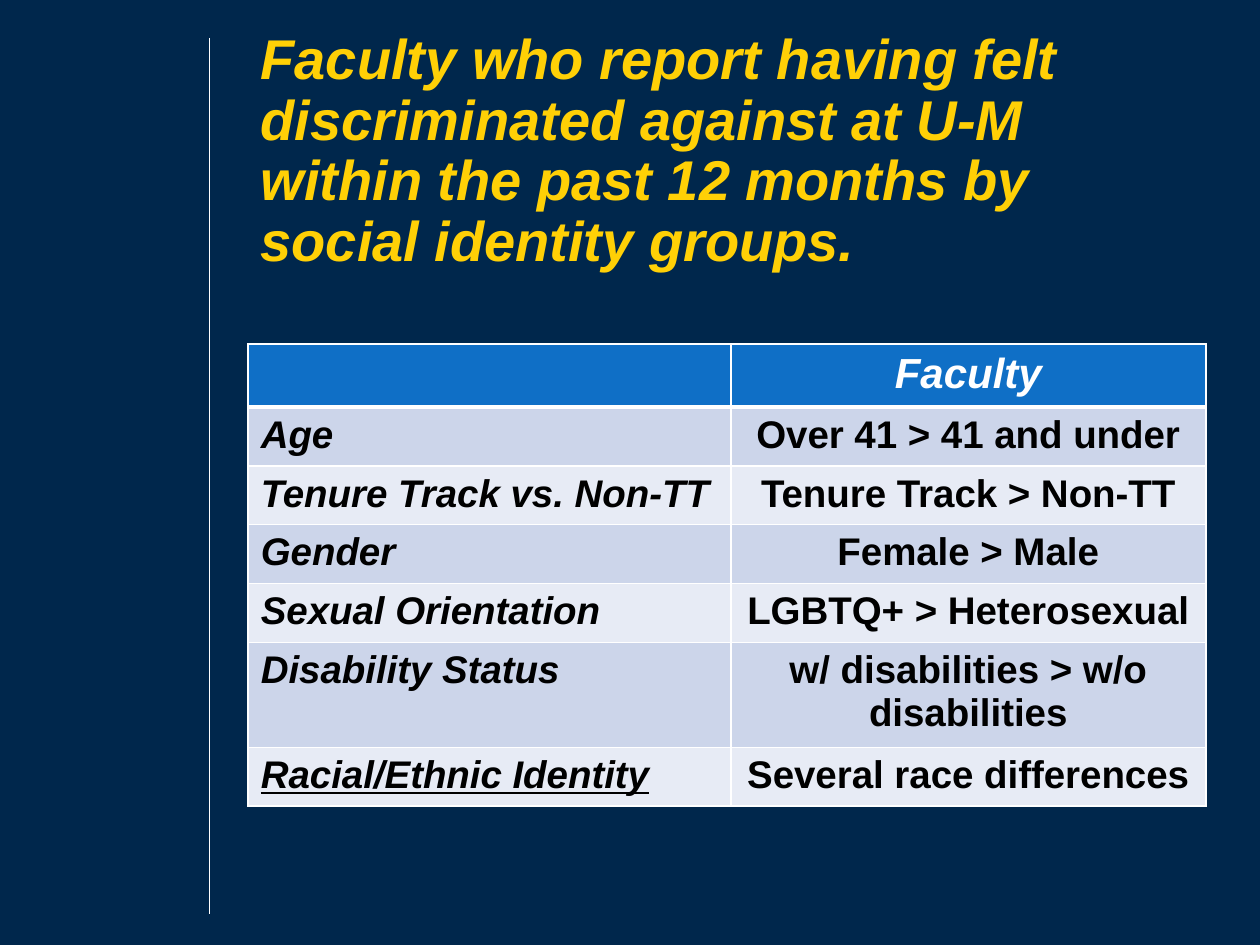
"""Build a slide on faculty discrimination reports by social identity group."""
from dataclasses import dataclass

from lxml import etree
from pptx import Presentation
from pptx.dml.color import RGBColor
from pptx.enum.shapes import MSO_CONNECTOR
from pptx.enum.text import MSO_ANCHOR, PP_ALIGN
from pptx.oxml.ns import qn
from pptx.util import Inches, Pt

STRAIGHT = MSO_CONNECTOR.STRAIGHT
TOP = MSO_ANCHOR.TOP
LEFT, CENTER = PP_ALIGN.LEFT, PP_ALIGN.CENTER
FONT = "Arial"
COLORS = {
    "navy": "00274C",
    "maize": "FFD006",
    "header": "0F6FC6",
    "odd": "CCD5EA",
    "even": "E7EBF5",
    "white": "FFFFFF",
    "black": "000000",
}
COLUMN_WIDTHS = (3.83, 3.77)
TITLE = (
    "Faculty who report having felt discriminated against at U-M "
    "within the past 12 months by social identity groups."
)


@dataclass(frozen=True)
class Row:
    group: str
    finding: str
    height: float = 0.44
    underline: bool = False


HEADER = Row("", "Faculty", 0.47)
ROWS = (
    Row("Age", "Over 41 > 41 and under"),
    Row("Tenure Track vs. Non-TT", "Tenure Track > Non-TT"),
    Row("Gender", "Female > Male"),
    Row("Sexual Orientation", "LGBTQ+ > Heterosexual"),
    Row("Disability Status", "w/ disabilities > w/o disabilities", 0.79),
    Row("Racial/Ethnic Identity", "Several race differences", underline=True),
)


def rgb(name: str) -> RGBColor:
    return RGBColor.from_string(COLORS[name])


def write_text(text_frame, text: str, size: int, color: str,
               italic: bool = True, underline: bool = False, align=LEFT):
    text_frame.text = text
    paragraph = text_frame.paragraphs[0]
    paragraph.alignment = align
    for run in paragraph.runs:
        font = run.font
        font.name, font.size, font.bold = FONT, Pt(size), True
        font.italic, font.underline = italic, underline
        font.color.rgb = rgb(color)
    return paragraph


def draw_borders(cell, bottom: float, top: float) -> None:
    properties = cell._tc.get_or_add_tcPr()
    widths = {"a:lnL": 1, "a:lnR": 1, "a:lnT": top, "a:lnB": bottom}
    for index, (tag, width) in enumerate(widths.items()):
        line = etree.Element(qn(tag), w=str(Pt(width)))
        fill = etree.SubElement(line, qn("a:solidFill"))
        etree.SubElement(fill, qn("a:srgbClr"), val=COLORS["white"])
        properties.insert(index, line)


def draw_divider(slide) -> None:
    divider = slide.shapes.add_connector(
        STRAIGHT, Inches(1.66), Inches(0.3), Inches(1.66), Inches(7.25))
    divider.line.color.rgb = rgb("white")
    divider.line.width = Pt(0.5)
    etree.SubElement(divider._element.spPr, qn("a:effectLst"))


def draw_title(slide) -> None:
    box = slide.shapes.add_textbox(
        Inches(1.97), Inches(0.2), Inches(7.63), Inches(1.45))
    box.text_frame.word_wrap = True
    box.text_frame.vertical_anchor = TOP
    paragraph = write_text(box.text_frame, TITLE, 32, "maize")
    paragraph.line_spacing = 0.9


def draw_table(slide) -> None:
    rows = (HEADER, *ROWS)
    table = slide.shapes.add_table(
        len(rows), len(COLUMN_WIDTHS), Inches(1.97), Inches(2.73),
        Inches(sum(COLUMN_WIDTHS)), Inches(sum(row.height for row in rows))).table
    for column, width in zip(table.columns, COLUMN_WIDTHS):
        column.width = Inches(width)
    for index, row in enumerate(rows):
        is_header = index == 0
        table.rows[index].height = Inches(row.height)
        fill = "header" if is_header else ("even", "odd")[index % 2]
        size, color = (24, "white") if is_header else (22, "black")
        group, finding = table.rows[index].cells
        write_text(group.text_frame, row.group, size, color, underline=row.underline)
        write_text(finding.text_frame, row.finding, size, color,
                   italic=is_header, align=CENTER)
        for cell in (group, finding):
            cell.fill.solid()
            cell.fill.fore_color.rgb = rgb(fill)
            draw_borders(cell, bottom=3 if is_header else 1, top=3 if index == 1 else 1)


def main() -> None:
    presentation = Presentation()
    presentation.slide_width, presentation.slide_height = Inches(10), Inches(7.5)
    slide = presentation.slides.add_slide(presentation.slide_layouts[6])
    slide.background.fill.solid()
    slide.background.fill.fore_color.rgb = rgb("navy")
    draw_divider(slide)
    draw_title(slide)
    draw_table(slide)
    presentation.save("out.pptx")


if __name__ == "__main__":
    main()
